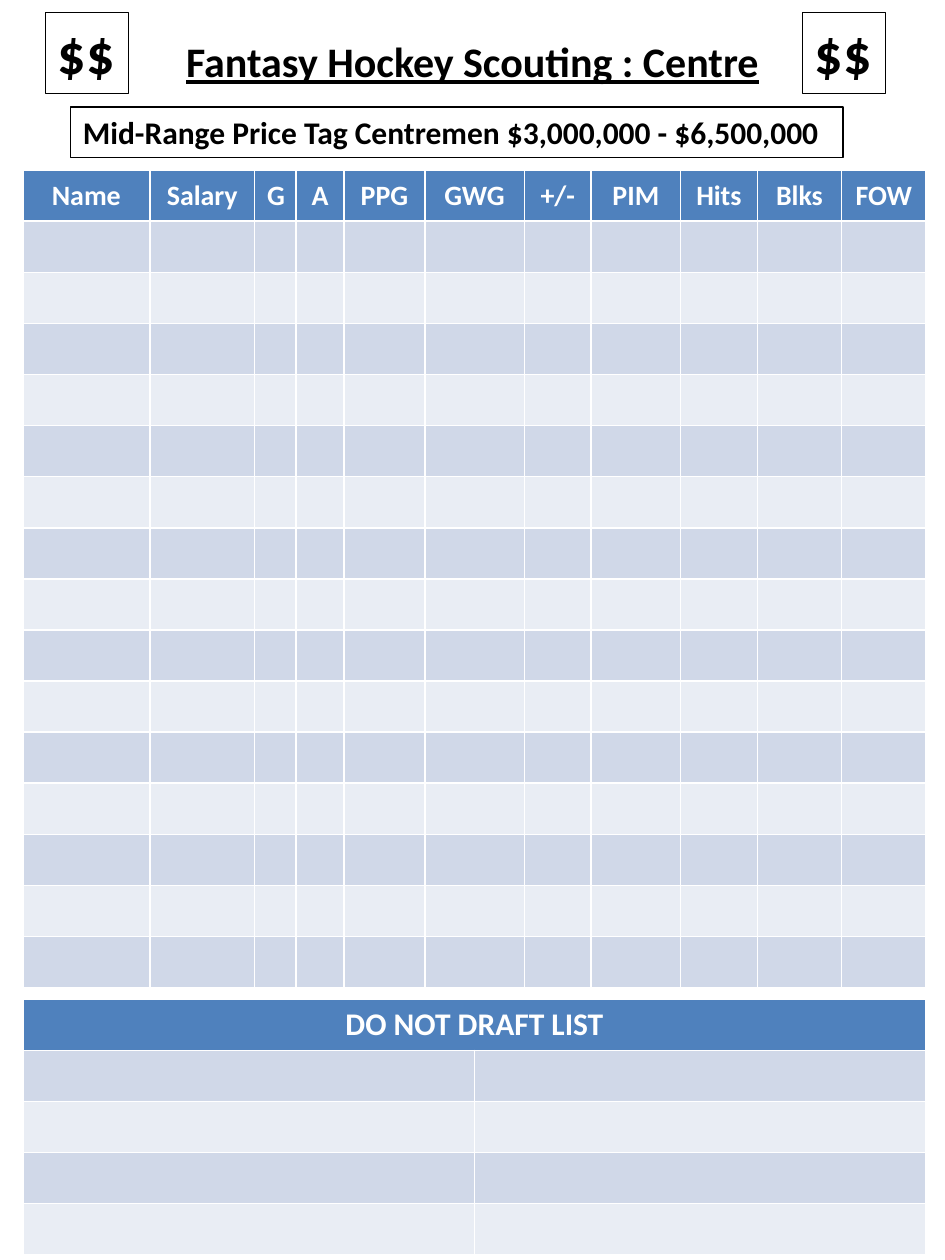
import pptx
import pptx.dml.color
import pptx.enum.text
import pptx.util
from dataclasses import dataclass

Pt = pptx.util.Pt
ALIGN = pptx.enum.text.PP_ALIGN
ANCHOR = pptx.enum.text.MSO_ANCHOR


@dataclass(frozen=True)
class Theme:
    font: str = "Calibri"
    ink: str = "000000"
    paper: str = "FFFFFF"
    header: str = "4F81BD"
    bands: tuple = ("D0D8E8", "E9EDF4")
    title_size: float = 24
    column_size: float = 16
    label_size: float = 18
    dollar_size: float = 32
    outline: float = 0.75
    row_height: float = 29.2


def color(value):
    return pptx.dml.color.RGBColor.from_string(value)


class ScoutingSheet:
    def __init__(self, slide, theme):
        self.slide = slide
        self.theme = theme

    def set_text(self, frame, text, size, ink, align, underline=None):
        frame.text = text
        para = frame.paragraphs[0]
        para.alignment = align
        for span in para.runs:
            span.font.name = self.theme.font
            span.font.size = Pt(size)
            span.font.bold = True
            span.font.underline = underline
            span.font.color.rgb = color(ink)

    def title(self, text, left, top, width, height):
        title = self.slide.shapes.title
        title.left, title.top = Pt(left), Pt(top)
        title.width, title.height = Pt(width), Pt(height)
        title.text_frame.vertical_anchor = ANCHOR.MIDDLE
        self.set_text(title.text_frame, text, self.theme.title_size,
                      self.theme.ink, ALIGN.CENTER, underline=True)

    def outlined_text(self, text, size, left, top, width, height):
        box = self.slide.shapes.add_textbox(Pt(left), Pt(top), Pt(width), Pt(height))
        box.line.color.rgb = color(self.theme.ink)
        box.line.width = Pt(self.theme.outline)
        box.text_frame.word_wrap = False
        box.text_frame.auto_size = pptx.enum.text.MSO_AUTO_SIZE.SHAPE_TO_FIT_TEXT
        self.set_text(box.text_frame, text, size, self.theme.ink, ALIGN.LEFT)

    def blank_table(self, headings, size, left, top, widths, blank_rows, anchor):
        """Table with a header and banded empty rows; a lone heading spans it."""
        rows = blank_rows + 1
        table = self.slide.shapes.add_table(
            rows, len(widths), Pt(left), Pt(top),
            Pt(sum(widths)), Pt(rows * self.theme.row_height)).table
        for column, width in zip(table.columns, widths):
            column.width = Pt(width)
        for index, row in enumerate(table.rows):
            row.height = Pt(self.theme.row_height)
            fill = self.theme.bands[(index - 1) % 2] if index else self.theme.header
            for cell in row.cells:
                cell.fill.solid()
                cell.fill.fore_color.rgb = color(fill)
        if len(headings) < len(widths):
            table.cell(0, 0).merge(table.cell(0, len(widths) - 1))
        for index, heading in enumerate(headings):
            cell = table.cell(0, index)
            cell.vertical_anchor = anchor
            self.set_text(cell.text_frame, heading, size, self.theme.paper, ALIGN.CENTER)


def main():
    deck = pptx.Presentation()
    deck.slide_width, deck.slide_height = Pt(540), Pt(720)
    theme = Theme()
    page = deck.slides.add_slide(deck.slide_layouts[5])
    sheet = ScoutingSheet(page, theme)

    # Title
    sheet.title("Fantasy Hockey Scouting : Centre", 40.3, 13, 459.4, 43.2)

    # Player table
    columns = {"Name": 72.7, "Salary": 59.8, "G": 23.8, "A": 27.4, "PPG": 46.1,
               "GWG": 56.9, "+/-": 38.2, "PIM": 51.1, "Hits": 43.9,
               "Blks": 48.2, "FOW": 48.2}
    table_left = 13
    widths = list(columns.values())
    sheet.blank_table(list(columns), theme.column_size, table_left, 97.2,
                      widths, 15, ANCHOR.MIDDLE)

    # Price range
    sheet.outlined_text("Mid-Range Price Tag Centremen $3,000,000 - $6,500,000",
                        theme.label_size, 40.3, 61.2, 441.4, 28.8)

    # Players to avoid, as wide as the player table
    sheet.blank_table(["DO NOT DRAFT LIST"], theme.label_size, table_left, 571,
                      [sum(widths) / 2] * 2, 4, ANCHOR.TOP)

    # Dollar signs on both sides of the title
    for left in (458.6, 25.9):
        sheet.outlined_text("$$", theme.dollar_size, left, 7.2, 47.5, 46.1)

    deck.save("out.pptx")


if __name__ == "__main__":
    main()
